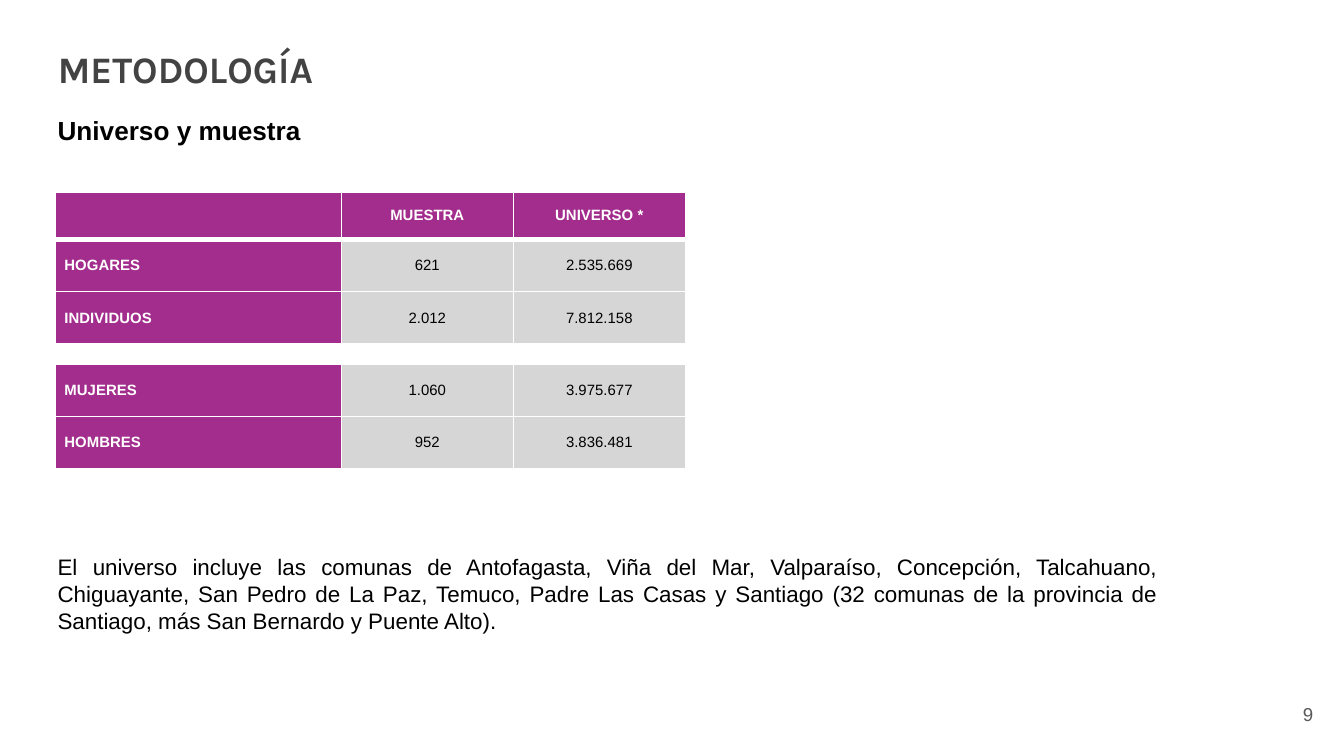
from lxml.etree import SubElement
from pptx import Presentation
from pptx.dml.color import RGBColor
from pptx.enum.text import MSO_ANCHOR as Anchor, PP_ALIGN as Align
from pptx.oxml.ns import qn
from pptx.util import Inches, Pt

COLORS = {"purple": "A32D8D", "grey": "D6D6D6", "white": "FFFFFF",
          "black": "000000", "title": "434343", "number": "595959"}

SLIDE_WIDTH = Inches(10)
SLIDE_HEIGHT = SLIDE_WIDTH * 9 // 16

COLUMN_WIDTHS = [2.13, 1.28, 1.28]
GAP_HEIGHT = 0.15
# An empty list is a gap between groups of rows
ROWS = [
    (0.35, ["", "MUESTRA", "UNIVERSO *"]),
    (0.39, ["HOGARES", "621", "2.535.669"]),
    (0.39, ["INDIVIDUOS", "2.012", "7.812.158"]),
    (GAP_HEIGHT, []),
    (0.39, ["MUJERES", "1.060", "3.975.677"]),
    (0.39, ["HOMBRES", "952", "3.836.481"]),
    (GAP_HEIGHT, []),
]
UNIVERSE_NOTE = (
    "El universo incluye las comunas de Antofagasta, Viña del Mar, Valparaíso, "
    "Concepción, Talcahuano, Chiguayante, San Pedro de La Paz, Temuco, "
    "Padre Las Casas y Santiago (32 comunas de la provincia de Santiago, "
    "más San Bernardo y Puente Alto).")


def set_attributes(target, values):
    for name, value in values.items():
        setattr(target, name, value)


def write(frame, text, size, color, bold=False, font="Arial", align=Align.LEFT):
    paragraph = frame.paragraphs[0]
    paragraph.alignment = align
    run = paragraph.add_run()
    run.text = text
    set_attributes(run.font, {"size": Pt(size), "bold": bold, "name": font})
    run.font.color.rgb = RGBColor.from_string(COLORS[color])


def add_text(slide, box, text, size, color, wrap=True, inset=0.1,
             anchor=Anchor.TOP, **style):
    shape = slide.shapes.add_textbox(*map(Inches, box))
    set_attributes(shape.text_frame, {
        "word_wrap": wrap, "vertical_anchor": anchor,
        "margin_top": Inches(inset), "margin_bottom": Inches(inset)})
    write(shape.text_frame, text, size, color, **style)


def add_title(slide, box, text):
    title = slide.shapes.title
    set_attributes(title, dict(zip(("left", "top", "width", "height"),
                                   map(Inches, box))))
    frame = title.text_frame
    set_attributes(frame, {"vertical_anchor": Anchor.TOP, "word_wrap": True})
    set_attributes(frame, {f"margin_{side}": Inches(0.1)
                           for side in ("left", "top", "right", "bottom")})
    write(frame, text, 20, "title", bold=True, font="Karla")


def set_borders(cell, bottom_width):
    properties = cell._tc.get_or_add_tcPr()
    widths = {"a:lnL": 1, "a:lnR": 1, "a:lnT": 1, "a:lnB": bottom_width}
    for index, (tag, width) in enumerate(widths.items()):
        line = properties.makeelement(qn(tag), {"w": str(Pt(width))})
        fill = SubElement(line, qn("a:solidFill"))
        SubElement(fill, qn("a:srgbClr"), val=COLORS["white"])
        properties.insert(index, line)


def format_cell(cell, text, row, column, is_gap):
    set_attributes(cell, {
        "vertical_anchor": Anchor.MIDDLE, "margin_top": 0, "margin_bottom": 0,
        "margin_left": Inches(0.07), "margin_right": Inches(0.07)})
    is_heading = row == 0 or column == 0
    if is_gap:
        cell.fill.background()
    else:
        cell.fill.solid()
        cell.fill.fore_color.rgb = RGBColor.from_string(
            COLORS["purple" if is_heading else "grey"])
    if text:
        write(cell.text_frame, text, 8, "white" if is_heading else "black",
              bold=is_heading, align=Align.CENTER if column else Align.LEFT)
    else:
        # Small text size keeps an empty row from growing
        SubElement(cell.text_frame.paragraphs[0]._p, qn("a:endParaRPr"), sz="800")
    set_borders(cell, 3 if row == 0 else 1)


def add_sample_table(slide, left, top):
    width, height = sum(COLUMN_WIDTHS), sum(height for height, _ in ROWS)
    table = slide.shapes.add_table(
        len(ROWS), len(COLUMN_WIDTHS),
        *map(Inches, (left, top, width, height))).table
    set_attributes(table, {"first_row": False, "horz_banding": False})
    for column, column_width in enumerate(COLUMN_WIDTHS):
        table.columns[column].width = Inches(column_width)
    for row, (row_height, texts) in enumerate(ROWS):
        table.rows[row].height = Inches(row_height)
        for column, text in enumerate(texts or [""] * len(COLUMN_WIDTHS)):
            format_cell(table.cell(row, column), text, row, column, not texts)


def build_methodology_slide(presentation):
    slide = presentation.slides.add_slide(presentation.slide_layouts[5])
    left = 0.33
    # Heading
    add_title(slide, (left, 0.24, 8.81, 0.63), "METODOLOGÍA")
    add_text(slide, (left, 0.8, 2.02, 0.34), "Universo y muestra", 14, "black",
             wrap=False, inset=0.05, bold=True)
    # Sample and universe sizes
    add_sample_table(slide, left + 0.08, 1.43)
    # Note and page number
    add_text(slide, (left, 4.07, 8.39, 0.71), UNIVERSE_NOTE, 12, "black",
             inset=0.05, align=Align.JUSTIFY)
    add_text(slide, (9.27, 5.1, 0.6, 0.43), "9", 10, "number",
             anchor=Anchor.MIDDLE, align=Align.RIGHT)


def main():
    presentation = Presentation()
    set_attributes(presentation, {"slide_width": SLIDE_WIDTH,
                                  "slide_height": SLIDE_HEIGHT})
    build_methodology_slide(presentation)
    presentation.save("out.pptx")


if __name__ == "__main__":
    main()
